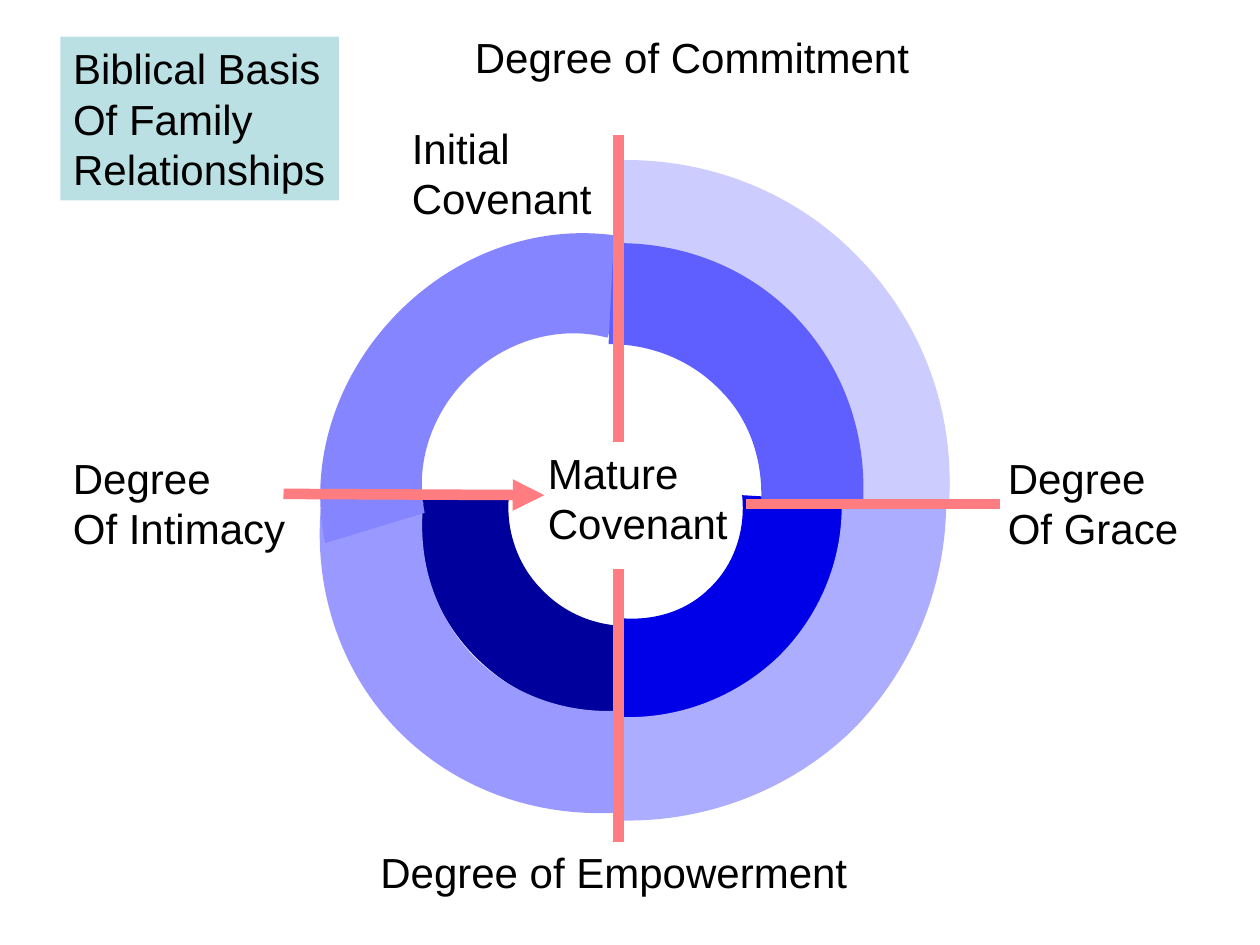
import math

import pptx
import pptx.dml.color
import pptx.enum.shapes
import pptx.enum.text
import pptx.oxml
import pptx.oxml.ns
import pptx.util
from pptx.util import Inches

THEME = {
    "font": "Arial", "size": 24, "text": "000000", "title_fill": "BBE0E3",
    "axis": "FF7C80", "axis_width": 6,
    "commitment_outer": "CCCCFF", "commitment_inner": "5F5FFF",
    "grace_outer": "ADADFF", "grace_inner": "0000E8",
    "empowerment_outer": "9999FF", "empowerment_inner": "00009C",
    "intimacy": "8585FF",
}
NS = pptx.oxml.ns.nsdecls("a")


def write(sp, lines, auto_size):
    """Fill a shape with left-aligned lines in the slide's type."""
    tf = sp.text_frame
    frame_format = {"word_wrap": False, "auto_size": auto_size,
                    "vertical_anchor": pptx.enum.text.MSO_ANCHOR.TOP}
    for name, value in frame_format.items():
        setattr(tf, name, value)
    for i, line in enumerate(lines):
        p = tf.paragraphs[0] if i == 0 else tf.add_paragraph()
        p.alignment = pptx.enum.text.PP_ALIGN.LEFT
        r = p.add_run()
        r.text = line
        for name, value in {"name": THEME["font"], "size": pptx.util.Pt(THEME["size"])}.items():
            setattr(r.font, name, value)
        r.font.color.rgb = pptx.dml.color.RGBColor.from_string(THEME["text"])


def add_band(shapes, color, frame, angle, edge, opposite):
    """Draw a curved band inside a frame turned by angle degrees."""
    left, top, width, height = frame
    cx, cy = left + width / 2, top + height / 2
    cos, sin = math.cos(math.radians(angle)), math.sin(math.radians(angle))
    nodes = [(Inches(width / 2 + (x - cx) * cos + (y - cy) * sin),
              Inches(height / 2 - (x - cx) * sin + (y - cy) * cos))
             for x, y in edge + opposite]
    builder = shapes.build_freeform(*nodes[0])
    builder.add_line_segments(nodes[1:], close=True)
    sp = builder.convert_to_shape()
    sp.left, sp.top, sp.width, sp.height = (Inches(v) for v in frame)
    sp.rotation = angle

    # Turn the straight outline into cubic curves
    pts = [f'<a:pt x="{x}" y="{y}"/>' for x, y in nodes]
    steps = [("moveTo", 0, 1), ("cubicBezTo", 1, 4), ("cubicBezTo", 4, 7),
             ("lnTo", 7, 8), ("cubicBezTo", 8, 11), ("cubicBezTo", 11, 14)]
    outline = "".join(f"<a:{tag}>{''.join(pts[a:b])}</a:{tag}>" for tag, a, b in steps)
    old = sp._element.find(".//" + pptx.oxml.ns.qn("a:path"))
    old.getparent().replace(old, pptx.oxml.parse_xml(
        f'<a:path {NS} w="{sp.width}" h="{sp.height}">{outline}<a:close/></a:path>'))

    sp.shadow.inherit = False
    sp.fill.solid()
    sp.fill.fore_color.rgb = pptx.dml.color.RGBColor.from_string(THEME[color])
    sp.line.fill.background()


prs = pptx.Presentation()
prs.slide_width, prs.slide_height = Inches(10), Inches(7.5)
s = prs.slides.add_slide(prs.slide_layouts[5])

# Title box
sp = s.shapes.title
sp.left, sp.top, sp.width, sp.height = (Inches(v) for v in (0.48, 0.29, 2.21, 1.3))
sp.fill.solid()
sp.fill.fore_color.rgb = pptx.dml.color.RGBColor.from_string(THEME["title_fill"])
write(sp, ["Biblical Basis", "Of Family", "Relationships"], pptx.enum.text.MSO_AUTO_SIZE.NONE)

# Spiral bands, back to front: colour, frame, angle, one edge, opposite edge
commitment = [
    [(6.68, 3.94), (6.71, 3.46), (6.54, 3), (6.21, 2.65), (5.88, 2.31), (5.42, 2.11), (4.94, 2.12)],
    [(4.93, 1.27), (5.65, 1.26), (6.34, 1.54), (6.83, 2.06), (7.32, 2.57), (7.58, 3.27), (7.53, 3.98)],
]
commitment_lower = [[(x, y + 0.05) for x, y in edge] for edge in commitment]
bands = [
    ("commitment_outer", (2.37, 1.25, 5.15, 5.22), 226.2, *commitment),
    ("empowerment_inner", (3.4, 2.1, 3.36, 3.66), 46.2,
     [(4.04, 3.93), (4.01, 4.21), (4.11, 4.49), (4.3, 4.68), (4.49, 4.88), (4.75, 4.98), (5.04, 4.97)],
     [(5.01, 5.69), (4.53, 5.71), (4.08, 5.53), (3.76, 5.2), (3.44, 4.87), (3.28, 4.41), (3.33, 3.93)]),
    ("empowerment_outer", (2.67, 1.41, 4.67, 5.17), 46.2,
     [(3.36, 3.99), (3.31, 4.45), (3.45, 4.88), (3.75, 5.2), (4.05, 5.51), (4.48, 5.67), (4.94, 5.64)],
     [(4.91, 6.45), (4.23, 6.49), (3.59, 6.25), (3.14, 5.78), (2.7, 5.32), (2.48, 4.67), (2.55, 3.99)]),
    ("grace_inner", (3.12, 1.85, 3.47, 4.02), 316.2,
     [(4.87, 4.9), (5.16, 4.94), (5.44, 4.86), (5.63, 4.67), (5.82, 4.49), (5.92, 4.22), (5.89, 3.93)],
     [(6.72, 3.98), (6.77, 4.5), (6.59, 4.98), (6.25, 5.32), (5.9, 5.65), (5.41, 5.8), (4.89, 5.73)]),
    ("intimacy", (2.46, 1.94, 3.98, 3.6), 136.2,
     [(4.82, 2.68), (4.44, 2.58), (4.02, 2.7), (3.72, 2.99), (3.42, 3.28), (3.29, 3.69), (3.37, 4.07)],
     [(2.58, 4.31), (2.44, 3.65), (2.68, 2.94), (3.2, 2.44), (3.72, 1.94), (4.44, 1.74), (5.09, 1.91)]),
    ("commitment_outer", (2.37, 1.3, 5.15, 5.22), 226.2, *commitment_lower),
    ("grace_outer", (2.5, 1.5, 5, 5.01), 316.2,
     [(4.91, 5.69), (5.38, 5.71), (5.83, 5.54), (6.17, 5.22), (6.5, 4.9), (6.69, 4.45), (6.68, 3.99)],
     [(7.51, 3.98), (7.51, 4.67), (7.23, 5.34), (6.74, 5.82), (6.24, 6.29), (5.56, 6.54), (4.87, 6.51)]),
    ("commitment_inner", (2.73, 1.85, 4.05, 4.35), 226.2,
     [(6.04, 4), (6.06, 3.66), (5.95, 3.33), (5.72, 3.1), (5.49, 2.86), (5.17, 2.73), (4.83, 2.73)],
     [(4.87, 1.93), (5.43, 1.92), (5.95, 2.13), (6.32, 2.52), (6.69, 2.91), (6.88, 3.43), (6.85, 3.99)]),
]

# Axes: colour, start, end, arrowhead; the first two lie below the last band
axes = [
    ("axis", (4.91, 4.52), (4.91, 6.68), False),
    ("axis", (2.25, 3.92), (4.32, 3.93), True),
    ("axis", (4.91, 3.51), (4.91, 1.07), False),
    ("axis", (5.92, 4), (7.94, 4), False),
]
for color, *geometry in bands[:-1] + axes[:2] + bands[-1:] + axes[2:]:
    if color != "axis":
        add_band(s.shapes, color, *geometry)
        continue
    start, end, arrow = geometry
    sp = s.shapes.add_connector(pptx.enum.shapes.MSO_CONNECTOR.STRAIGHT,
                                *(Inches(v) for v in start + end))
    sp.line.width = pptx.util.Pt(THEME["axis_width"])
    sp.line.color.rgb = pptx.dml.color.RGBColor.from_string(THEME[color])
    if arrow:
        ln = sp._element.spPr.find(pptx.oxml.ns.qn("a:ln"))
        ln.append(pptx.oxml.parse_xml(f'<a:tailEnd {NS} type="triangle"/>'))
    sp._element.spPr.append(pptx.oxml.parse_xml(f"<a:effectLst {NS}/>"))

# Labels: left, top, width, height, lines
labels = [
    (3.67, 0.2, 3.65, 0.5, ["Degree of Commitment"]),
    (3.17, 0.92, 1.63, 0.9, ["Initial", "Covenant"]),
    (7.9, 3.54, 1.55, 0.9, ["Degree", "Of Grace"]),
    (2.92, 6.67, 3.95, 0.5, ["Degree of Empowerment"]),
    (0.48, 3.54, 1.89, 0.9, ["Degree", "Of Intimacy"]),
    (4.25, 3.5, 1.63, 0.9, ["Mature", "Covenant"]),
]
for *box, lines in labels:
    sp = s.shapes.add_textbox(*(Inches(v) for v in box))
    write(sp, lines, pptx.enum.text.MSO_AUTO_SIZE.SHAPE_TO_FIT_TEXT)

prs.save("out.pptx")
